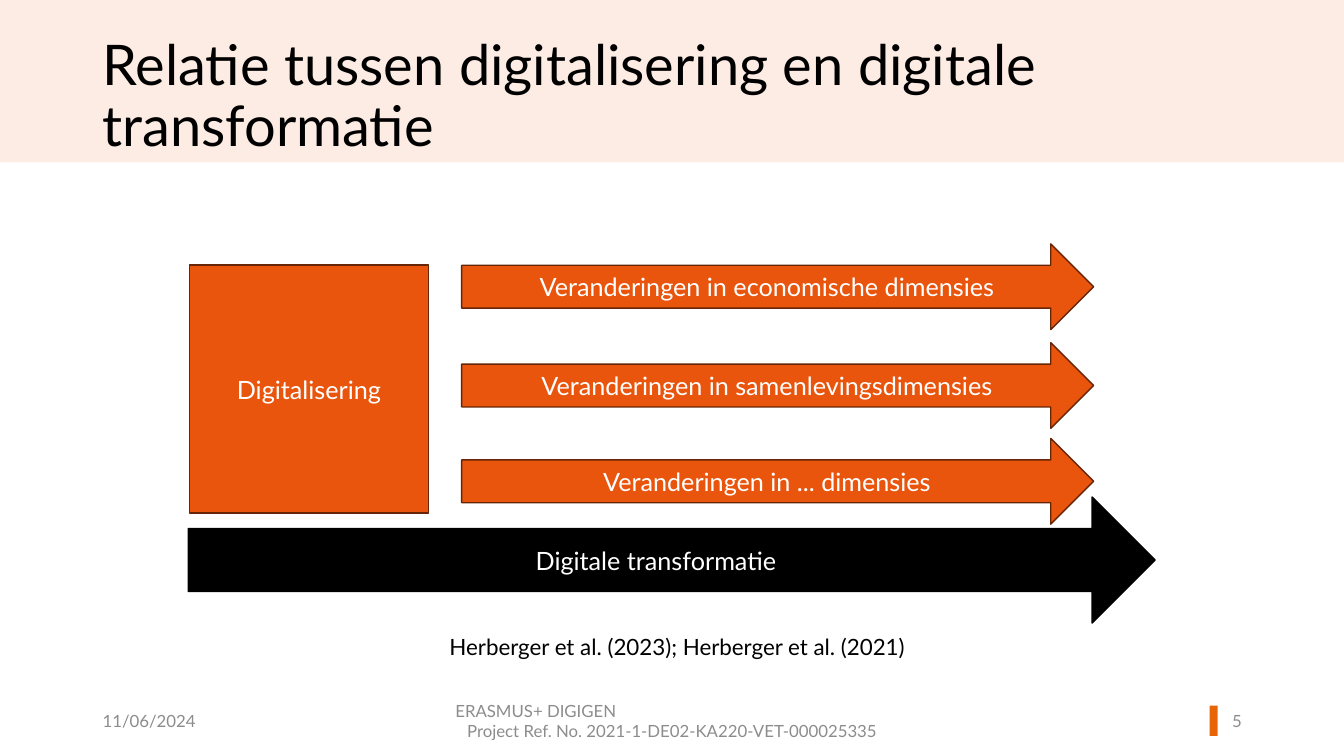
from dataclasses import dataclass
from pptx import Presentation
from pptx.dml.color import RGBColor as Rgb
from pptx.enum.shapes import MSO_SHAPE as Kind
from pptx.enum.text import MSO_ANCHOR as Anchor, PP_ALIGN as Align
from pptx.slide import Slide
from pptx.text.text import TextFrame
from pptx.util import Pt


@dataclass(frozen=True)
class Theme:
    font: str = "Lato"
    band: str = "FDECE3"
    mark: str = "E86507"
    fill: str = "E9550D"
    edge: str = "662506"
    dark: str = "000000"
    light: str = "FFFFFF"
    grey: str = "8C8C8C"
    head: int = 40
    body: int = 18
    cite: int = 16
    foot: int = 12


@dataclass(frozen=True)
class Area:
    left: float
    top: float
    width: float
    height: float

    def points(self) -> tuple[Pt, Pt, Pt, Pt]:
        return Pt(self.left), Pt(self.top), Pt(self.width), Pt(self.height)


@dataclass(frozen=True)
class Block:
    area: Area
    fill: str
    edge: str = ""
    text: str = ""
    kind: Kind = Kind.RECTANGLE


@dataclass(frozen=True)
class Label:
    area: Area
    text: str
    size: int
    color: str
    aligns: tuple[Align, ...] = (Align.LEFT,)
    anchor: Anchor = Anchor.MIDDLE
    spacing: float = 1.0


THEME = Theme()
WIDTH, HEIGHT = 960, 540
FOOT_TOP, FOOT_HIGH = 500.4, 28.8


def style(frame: TextFrame, label: Label) -> None:
    frame.word_wrap = True
    frame.vertical_anchor = label.anchor
    frame.text = label.text
    for para, align in zip(frame.paragraphs, label.aligns):
        para.alignment = align
        para.line_spacing = label.spacing
        for run in para.runs:
            run.font.name = THEME.font
            run.font.size = Pt(label.size)
            run.font.color.rgb = Rgb.from_string(label.color)


def draw_block(slide: Slide, block: Block) -> None:
    shape = slide.shapes.add_shape(block.kind, *block.area.points())
    shape.shadow.inherit = False
    shape.fill.solid()
    shape.fill.fore_color.rgb = Rgb.from_string(block.fill)
    if block.edge:
        shape.line.color.rgb = Rgb.from_string(block.edge)
        shape.line.width = Pt(1)
    else:
        shape.line.fill.background()
    if block.text:
        style(shape.text_frame, Label(block.area, block.text, THEME.body,
                                      THEME.light, (Align.CENTER,)))


def draw_label(slide: Slide, label: Label) -> None:
    box = slide.shapes.add_textbox(*label.area.points())
    style(box.text_frame, label)


def change(top: float, topic: str) -> Block:
    return Block(Area(329.8, top, 451.4, 61.2), THEME.fill, THEME.edge,
                 f"Veranderingen in {topic}", Kind.RIGHT_ARROW)


def foot(left: float, width: float, text: str, *aligns: Align) -> Label:
    return Label(Area(left, FOOT_TOP, width, FOOT_HIGH), text,
                 THEME.foot, THEME.grey, aligns)


BLOCKS = [
    Block(Area(0, 0, WIDTH, 115.9), THEME.band),
    Block(Area(864, 504, 5.8, 21.6), THEME.mark),
    Block(Area(135.4, 189.4, 170.6, 177.1), THEME.fill, THEME.edge,
          "Digitalisering"),
    Block(Area(134.6, 355, 690.5, 90), THEME.dark, THEME.dark,
          "Digitale transformatie", Kind.RIGHT_ARROW),
    change(174.2, "economische dimensies"),
    change(244.8, "samenlevingsdimensies"),
    change(313.2, "... dimensies"),
]

LABELS = [
    Label(Area(66.2, 23, 715, 61.2),
          "Relatie tussen digitalisering en digitale transformatie",
          THEME.head, THEME.dark, anchor=Anchor.TOP, spacing=0.9),
    Label(Area(282.2, 448.6, 403.2, 26.6),
          "Herberger et al. (2023); Herberger et al. (2021)",
          THEME.cite, THEME.dark, (Align.CENTER,), Anchor.TOP),
    foot(66.2, 216, "11/06/2024", Align.LEFT),
    foot(318.2, 324,
         "ERASMUS+ DIGIGEN\nProject Ref. No. 2021-1-DE02-KA220-VET-000025335",
         Align.LEFT, Align.CENTER),
    foot(847.4, 46.8, "5", Align.RIGHT),
]


def main() -> None:
    deck = Presentation()
    deck.slide_width, deck.slide_height = Pt(WIDTH), Pt(HEIGHT)
    slide = deck.slides.add_slide(deck.slide_layouts[6])
    for block in BLOCKS:
        draw_block(slide, block)
    for label in LABELS:
        draw_label(slide, label)
    deck.save("out.pptx")


if __name__ == "__main__":
    main()
